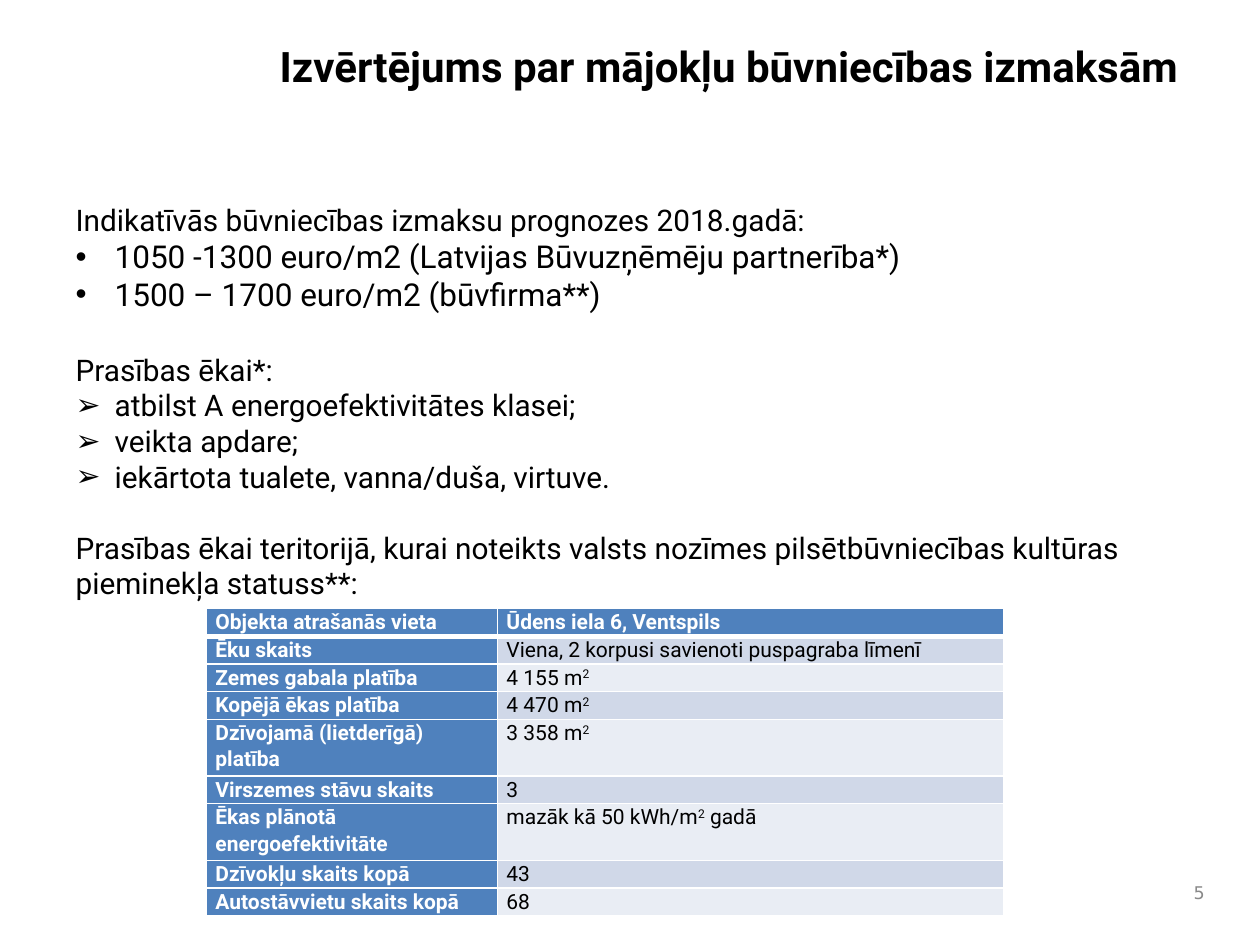
from lxml.etree import SubElement
from pptx import Presentation
from pptx.dml.color import RGBColor
from pptx.enum.text import MSO_ANCHOR as Anchor, MSO_AUTO_SIZE as AutoSize, PP_ALIGN as Align
from pptx.oxml import parse_xml
from pptx.oxml.ns import nsdecls, qn
from pptx.util import Inches, Pt

BLUE, WHITE, BLACK, GREY = "4F81BD", "FFFFFF", "000000", "898989"
BANDS = ["E9EDF4", "D0D8E8"]


def write(para, text, size=17, color=BLACK, bold=False, font="Roboto", align=Align.LEFT,
          spacing=1.0, before=0, bullet=None):
    """Fill a paragraph; text between carets is superscript."""
    para.alignment = align
    para.line_spacing = spacing
    para.space_before = Pt(before)
    props = para._p.get_or_add_pPr()
    indent = Inches(0.31) if bullet else 0
    props.set("marL", str(indent))
    props.set("indent", str(-indent))
    if bullet:
        SubElement(props, qn("a:buFont")).set("typeface", "Arial")
        SubElement(props, qn("a:buChar")).set("char", bullet)
    else:
        SubElement(props, qn("a:buNone"))
    for index, part in enumerate(text.split("^")):
        span = para.add_run()
        span.text = part
        span.font.name = font
        span.font.size = Pt(size)
        span.font.bold = bold
        span.font.color.rgb = RGBColor.from_string(color)
        if index % 2:
            span._r.get_or_add_rPr().set("baseline", "30000")


def add_border(cell, side, points):
    cell._tc.get_or_add_tcPr().append(parse_xml(
        f'<a:ln{side} {nsdecls("a")} w="{Pt(points)}"><a:solidFill>'
        f'<a:srgbClr val="{WHITE}"/></a:solidFill></a:ln{side}>'))


deck = Presentation()
deck.slide_width, deck.slide_height = Inches(10), Inches(7.5)
page = deck.slides.add_slide(deck.slide_layouts[1])

# Title
title = page.shapes.title
title.left, title.top, title.width, title.height = map(Inches, (2.12, 0.27, 7.38, 1.13))
title.text_frame.auto_size = AutoSize.NONE
title.text_frame.vertical_anchor = Anchor.TOP
write(title.text_frame.paragraphs[0], "Izvērtējums par mājokļu būvniecības izmaksām",
      size=24, bold=True, align=Align.JUSTIFY)

# Table of building requirements
rows = [
    ("Objekta atrašanās vieta", "Ūdens iela 6, Ventspils"),
    ("Ēku skaits", "Viena, 2 korpusi savienoti puspagraba līmenī"),
    ("Zemes gabala platība", "4 155 m^2"),
    ("Kopējā ēkas platība", "4 470 m^2"),
    ("Dzīvojamā (lietderīgā) platība", "3 358 m^2"),
    ("Virszemes stāvu skaits", "3"),
    ("Ēkas plānotā energoefektivitāte", "mazāk kā 50 kWh/m^2^ gadā"),
    ("Dzīvokļu skaits kopā", "43"),
    ("Autostāvvietu skaits kopā", "68"),
]
tall_rows = (4, 6)
table = page.shapes.add_table(len(rows), 2, Inches(1.64), Inches(4.83),
                              Inches(6.32), Inches(2.42)).table
table.horz_banding = False
table.columns[0].width, table.columns[1].width = Inches(2.31), Inches(4.02)
for r, row in enumerate(rows):
    table.rows[r].height = Inches(0.45 if r in tall_rows else 0.22)
    for c, text in enumerate(row):
        cell = table.cell(r, c)
        cell.margin_left = cell.margin_right = Inches(0.07)
        cell.margin_top = cell.margin_bottom = 0
        for side in "LRTB":
            under_header = (r, side) in ((0, "B"), (1, "T"))
            add_border(cell, side, 3 if under_header else 1)
        heading = r == 0 or c == 0
        cell.fill.solid()
        cell.fill.fore_color.rgb = RGBColor.from_string(BLUE if heading else BANDS[r % 2])
        write(cell.text_frame.paragraphs[0], text, size=12, spacing=1.07,
              color=WHITE if heading else BLACK, bold=heading)

# Page number
number = page.shapes.add_textbox(Inches(9.33), Inches(6.92), Inches(0.33), Inches(0.33))
number.text_frame.word_wrap = True
number.text_frame.vertical_anchor = Anchor.MIDDLE
write(number.text_frame.paragraphs[0], "5", size=10, color=GREY, font="DejaVu Sans",
      align=Align.RIGHT)

# Cost forecasts and requirements
body = page.placeholders[1]
body.left, body.top, body.width, body.height = map(Inches, (0.5, 1.55, 8.59, 3.87))
frame = body.text_frame
frame.auto_size = AutoSize.NONE
frame.vertical_anchor = Anchor.TOP
lines = [
    ("Indikatīvās būvniecības izmaksu prognozes 2018.gadā:", {}),
    ("1050 -1300 euro/m2 (Latvijas Būvuzņēmēju partnerība*)", {"size": 18, "bullet": "•"}),
    ("1500 – 1700 euro/m2 (būvfirma**)", {"size": 18, "bullet": "•"}),
    ("Prasības ēkai*:", {"before": 22}),
    ("atbilst A energoefektivitātes klasei;", {"bullet": "➢"}),
    ("veikta apdare;", {"bullet": "➢"}),
    ("iekārtota tualete, vanna/duša, virtuve.", {"bullet": "➢"}),
    ("Prasības ēkai teritorijā, kurai noteikts valsts nozīmes pilsētbūvniecības kultūras "
     "pieminekļa statuss**:", {"before": 20}),
]
for index, (text, style) in enumerate(lines):
    para = frame.add_paragraph() if index else frame.paragraphs[0]
    write(para, text, **style)

deck.save("out.pptx")
